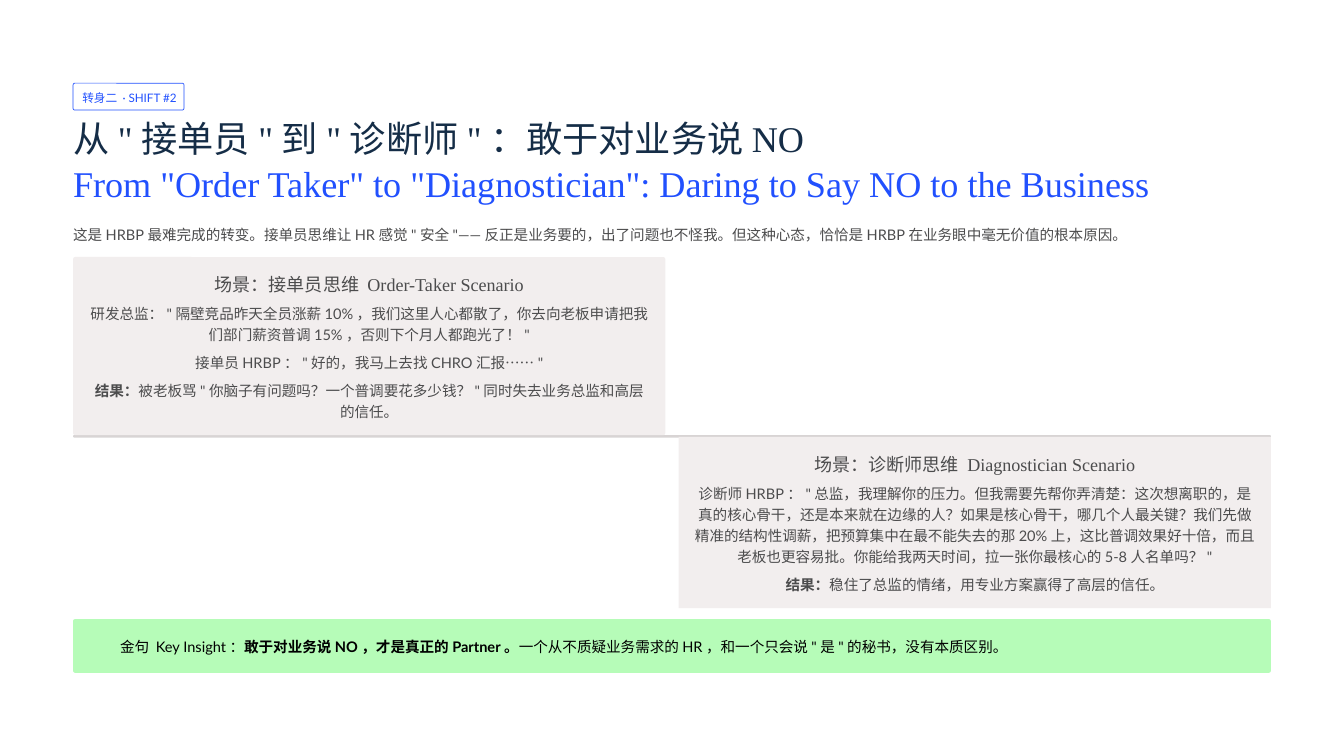
from dataclasses import dataclass

from pptx import Presentation
from pptx.dml.color import RGBColor
from pptx.enum.shapes import MSO_SHAPE as SHAPE
from pptx.enum.text import MSO_ANCHOR as ANCHOR, PP_ALIGN as ALIGN
from pptx.util import Inches, Pt


@dataclass(frozen=True)
class Theme:
    blue: str = "2150FE"
    navy: str = "152D47"
    grey: str = "4C4C4D"
    black: str = "000000"
    white: str = "FFFFFF"
    card: str = "F2EEEE"
    rule: str = "D8D4D4"
    green: str = "B6FCB8"
    serif: str = "Times New Roman"
    sans: str = "Lato"
    title: float = 31
    heading: float = 15.5
    body: float = 12.5
    tag: float = 10


T = Theme()
LEFT, WIDTH = 0.87, 14.26
CARD_W, CARD_PAD = 7.05, 0.18


def add_box(s, kind, x, y, w, h, fill=None, line=None, radius=None):
    sp = s.shapes.add_shape(kind, Inches(x), Inches(y), Inches(w), Inches(h))
    sp.shadow.inherit = False
    if radius is not None:
        sp.adjustments[0] = radius
    if fill:
        sp.fill.solid()
        sp.fill.fore_color.rgb = RGBColor.from_string(fill)
    else:
        sp.fill.background()
    if line:
        sp.line.color.rgb = RGBColor.from_string(line)
        sp.line.width = Pt(0.6)
    else:
        sp.line.fill.background()


def add_text(s, x, y, w, h, paragraphs, size, font, leading, color=T.grey,
             align=ALIGN.LEFT, gap=0):
    """Each paragraph is a list of runs: (text, bold) or (text, bold, color)."""
    tf = s.shapes.add_textbox(Inches(x), Inches(y), Inches(w), Inches(h)).text_frame
    tf.margin_left = tf.margin_right = tf.margin_top = tf.margin_bottom = 0
    tf.word_wrap = True
    tf.vertical_anchor = ANCHOR.TOP
    for i, runs in enumerate(paragraphs):
        p = tf.add_paragraph() if i else tf.paragraphs[0]
        p.alignment = align
        p.line_spacing = Pt(leading)
        if i and gap:
            p.space_before = Pt(gap)
        for text, bold, *own_color in runs:
            r = p.add_run()
            r.text = text
            r.font.name = font
            r.font.size = Pt(size)
            r.font.bold = bold
            r.font.color.rgb = RGBColor.from_string(own_color[0] if own_color else color)


def add_scenario(s, kind, x, y, h, heading, paragraphs, radius=None):
    add_box(s, kind, x, y, CARD_W, h, T.card, radius=radius)
    inner_x, inner_w = x + CARD_PAD, CARD_W - 2 * CARD_PAD
    add_text(s, inner_x, y + CARD_PAD, inner_w, 0.27, [[(heading, False)]],
             T.heading, T.serif, 19.5, align=ALIGN.CENTER)
    add_text(s, inner_x, y + 0.53, inner_w, h - 0.7, paragraphs,
             T.body, T.sans, 18, align=ALIGN.CENTER, gap=6)


def main():
    prs = Presentation()
    prs.slide_width, prs.slide_height = Inches(16), Inches(9)
    s = prs.slides.add_slide(prs.slide_layouts[6])
    s.background.fill.solid()
    s.background.fill.fore_color.rgb = RGBColor.from_string(T.white)

    # Tag
    add_box(s, SHAPE.ROUNDED_RECTANGLE, LEFT, 0.99, 1.32, 0.32, line=T.blue, radius=0.065)
    add_text(s, 0.98, 1.05, 1.21, 0.2, [[("转身二 · SHIFT #2", False)]],
             T.tag, T.sans, 14, T.blue)

    # Title and introduction
    add_text(s, LEFT, 1.36, 13.13, 1.09, [
        [('从"接单员"到"诊断师"：敢于对业务说NO', False)],
        [('From "Order Taker" to "Diagnostician": Daring to Say NO to the Business',
          False, T.blue)],
    ], T.title, T.serif, 39, T.navy)
    add_text(s, LEFT, 2.65, WIDTH, 0.25, [[(
        '这是HRBP最难完成的转变。接单员思维让HR感觉"安全"——反正是业务要的，'
        '出了问题也不怪我。但这种心态，恰恰是HRBP在业务眼中毫无价值的根本原因。', False)]],
        T.body, T.sans, 18)

    # Scenarios on either side of the dividing rule
    add_box(s, SHAPE.ROUNDED_RECTANGLE, LEFT, 5.18, WIDTH, 0.03, T.rule, radius=0.5)
    add_scenario(s, SHAPE.ROUNDED_RECTANGLE, LEFT, 3.06, 2.12,
                 "场景：接单员思维 Order-Taker Scenario", [
        [('研发总监："隔壁竞品昨天全员涨薪10%，我们这里人心都散了，'
          '你去向老板申请把我们部门薪资普调15%，否则下个月人都跑光了！"', False)],
        [('接单员HRBP："好的，我马上去找CHRO汇报……"', False)],
        [("结果：", True),
         ('被老板骂"你脑子有问题吗？一个普调要花多少钱？"同时失去业务总监和高层的信任。',
          False)],
    ], radius=0.012)
    add_scenario(s, SHAPE.RECTANGLE, LEFT + WIDTH - CARD_W, 5.2, 2.04,
                 "场景：诊断师思维 Diagnostician Scenario", [
        [('诊断师HRBP："总监，我理解你的压力。但我需要先帮你弄清楚：这次想离职的，'
          '是真的核心骨干，还是本来就在边缘的人？如果是核心骨干，哪几个人最关键？'
          '我们先做精准的结构性调薪，把预算集中在最不能失去的那20%上，'
          '这比普调效果好十倍，而且老板也更容易批。'
          '你能给我两天时间，拉一张你最核心的5-8人名单吗？"', False)],
        [("结果：", True), ("稳住了总监的情绪，用专业方案赢得了高层的信任。", False)],
    ])

    # Key insight
    add_box(s, SHAPE.ROUNDED_RECTANGLE, LEFT, 7.37, WIDTH, 0.64, T.green, radius=0.04)
    add_text(s, 1.43, 7.55, 13.53, 0.25, [[
        ("金句 Key Insight：", False),
        ("敢于对业务说NO，才是真正的Partner。", True),
        ('一个从不质疑业务需求的HR，和一个只会说"是"的秘书，没有本质区别。', False),
    ]], T.body, T.sans, 18, T.black)

    prs.save("out.pptx")


if __name__ == "__main__":
    main()
